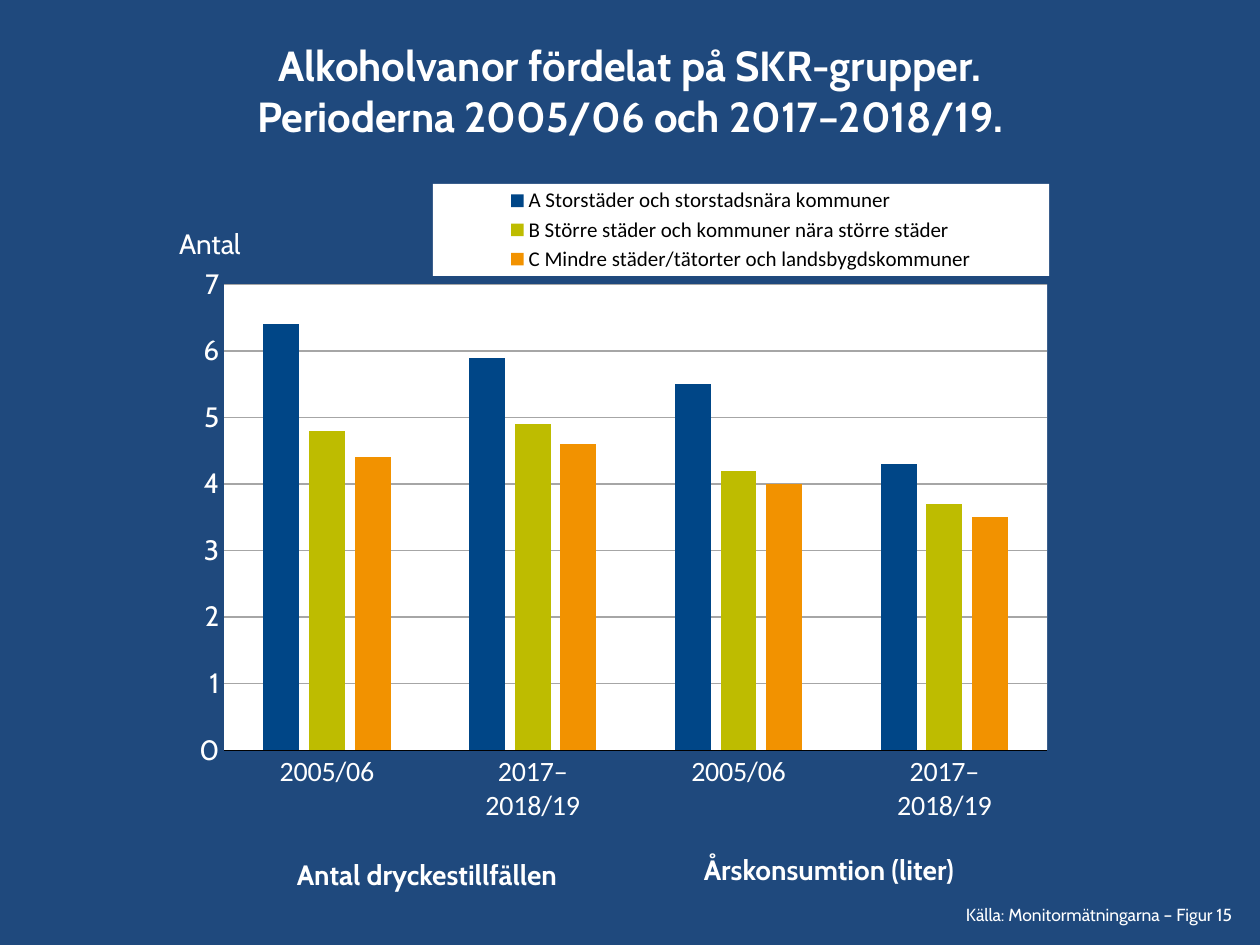
import pptx
import pptx.chart.data
import pptx.dml.color
import pptx.enum.chart
import pptx.enum.text
import pptx.oxml
import pptx.oxml.ns
import pptx.util

SCALE = 914400 // 126
COLORS = {
    "background": "1F497D", "white": "FFFFFF", "black": "000000", "grid": "A6A6A6",
    "large": "004687", "medium": "BEBC00", "small": "F29200",
}
NAMESPACES = pptx.oxml.ns.nsdecls("c", "a")
qn = pptx.oxml.ns.qn


def set_font(font, color="white", **values):
    for name, value in values.items():
        setattr(font, name, pptx.util.Pt(value) if name == "size" else value)
    font.color.rgb = pptx.dml.color.RGBColor.from_string(COLORS[color])


def make_layout(x, y, width=None, height=None, inner=False):
    tags = [("layoutTarget", "inner")] if inner else []
    tags += [("xMode", "edge"), ("yMode", "edge"), ("x", x), ("y", y)]
    tags += [("w", width), ("h", height)] if width else []
    body = "".join(f'<c:{tag} val="{value}"/>' for tag, value in tags)
    return pptx.oxml.parse_xml(
        f"<c:layout {NAMESPACES}><c:manualLayout>{body}</c:manualLayout></c:layout>")


presentation = pptx.Presentation()
presentation.slide_width = 1260 * SCALE
presentation.slide_height = 945 * SCALE
slide = presentation.slides.add_slide(presentation.slide_layouts[6])
slide.background.fill.solid()
slide.background.fill.fore_color.rgb = pptx.dml.color.RGBColor.from_string(COLORS["background"])

chart_data = pptx.chart.data.CategoryChartData()
chart_data.categories = ["2005/06", "2017–\n2018/19"] * 2
groups = [
    ("A Storstäder och storstadsnära kommuner", [6.4, 5.9, 5.5, 4.3], "large"),
    ("B Större städer och kommuner nära större städer", [4.8, 4.9, 4.2, 3.7], "medium"),
    ("C Mindre städer/tätorter och landsbygdskommuner", [4.4, 4.6, 4, 3.5], "small"),
]
for name, values, color in groups:
    chart_data.add_series(name, values)
chart = slide.shapes.add_chart(
    pptx.enum.chart.XL_CHART_TYPE.COLUMN_CLUSTERED,
    174 * SCALE, 184 * SCALE, 893 * SCALE, 707 * SCALE, chart_data).chart
chart.has_title = False
set_font(chart.font, size=10, name="Calibri")

plot = chart.plots[0]
for name, value in {"gap_width": 219, "overlap": -27, "vary_by_categories": False}.items():
    setattr(plot, name, value)
for series, (name, values, color) in zip(plot.series, groups):
    series.format.fill.solid()
    series.format.fill.fore_color.rgb = pptx.dml.color.RGBColor.from_string(COLORS[color])

category_axis, value_axis = chart.category_axis, chart.value_axis
for axis, font_name in [(category_axis, "Calibri"), (value_axis, "Cabin")]:
    axis.major_tick_mark = pptx.enum.chart.XL_TICK_MARK.NONE
    axis.minor_tick_mark = pptx.enum.chart.XL_TICK_MARK.NONE
    set_font(axis.tick_labels.font, size=16, name=font_name)
axis_values = {"minimum_scale": 0, "maximum_scale": 7, "major_unit": 1,
               "has_major_gridlines": True, "has_title": True}
for name, value in axis_values.items():
    setattr(value_axis, name, value)
value_axis.format.line.fill.background()
for line, color in [(category_axis.format.line, "black"),
                    (value_axis.major_gridlines.format.line, "grid")]:
    line.width = pptx.util.Pt(0.75)
    line.color.rgb = pptx.dml.color.RGBColor.from_string(COLORS[color])

axis_title = value_axis.axis_title
axis_title.text_frame.text = "Antal"
set_font(axis_title.text_frame.paragraphs[0].runs[0].font, size=16, name="Cabin", bold=False)
title_element = axis_title._element
body_properties = title_element.find(".//" + qn("a:bodyPr"))
body_properties.set("rot", "0")
body_properties.set("vert", "horz")

chart.has_legend = True
legend = chart.legend
legend.position = pptx.enum.chart.XL_LEGEND_POSITION.BOTTOM
legend.include_in_layout = False
set_font(legend.font, "black", size=12, name="Calibri")
legend_element = legend._element
plot_area = chart._chartSpace.chart.plotArea

for element in (title_element, legend_element, plot_area):
    for old_layout in element.findall(qn("c:layout")):
        element.remove(old_layout)
title_element.find(qn("c:tx")).addnext(make_layout(0.0, 0.05))
legend_element.find(qn("c:legendPos")).addnext(make_layout(0.29, 0.0, 0.69, 0.13))
plot_area.insert(0, make_layout(0.056, 0.142, 0.922, 0.659, inner=True))
white_fill = (f'<c:spPr {NAMESPACES}><a:solidFill><a:srgbClr val="{COLORS["white"]}"/>'
              "</a:solidFill></c:spPr>")
legend_element.find(qn("c:txPr")).addprevious(pptx.oxml.parse_xml(white_fill))
plot_area.append(pptx.oxml.parse_xml(white_fill))

center, right = pptx.enum.text.PP_ALIGN.CENTER, pptx.enum.text.PP_ALIGN.RIGHT
top, middle = pptx.enum.text.MSO_ANCHOR.TOP, pptx.enum.text.MSO_ANCHOR.MIDDLE
texts = [
    ("Alkoholvanor fördelat på SKR-grupper.\vPerioderna 2005/06 och 2017–2018/19.",
     (37, 35, 1186, 110), 24, True, center, middle, 6),
    ("Antal dryckestillfällen", (263, 852, 328, 47), 16, True, center, top, 6),
    ("Årskonsumtion (liter)", (665, 847, 328, 47), 16, True, center, top, 6),
    ("Källa: Monitormätningarna – Figur 15", (958, 898, 280, 34), 10, False, right, middle, 6),
]
for text, box, size, bold, alignment, anchor, margin in texts:
    shape = slide.shapes.add_textbox(*(length * SCALE for length in box))
    frame_values = {"word_wrap": True, "vertical_anchor": anchor, "text": text}
    for side in ("left", "right", "top", "bottom"):
        frame_values["margin_" + side] = margin * SCALE
    for name, value in frame_values.items():
        setattr(shape.text_frame, name, value)
    paragraph = shape.text_frame.paragraphs[0]
    paragraph.alignment = alignment
    for run in paragraph.runs:
        set_font(run.font, size=size, name="Cabin", bold=bold)

presentation.save("out.pptx")
